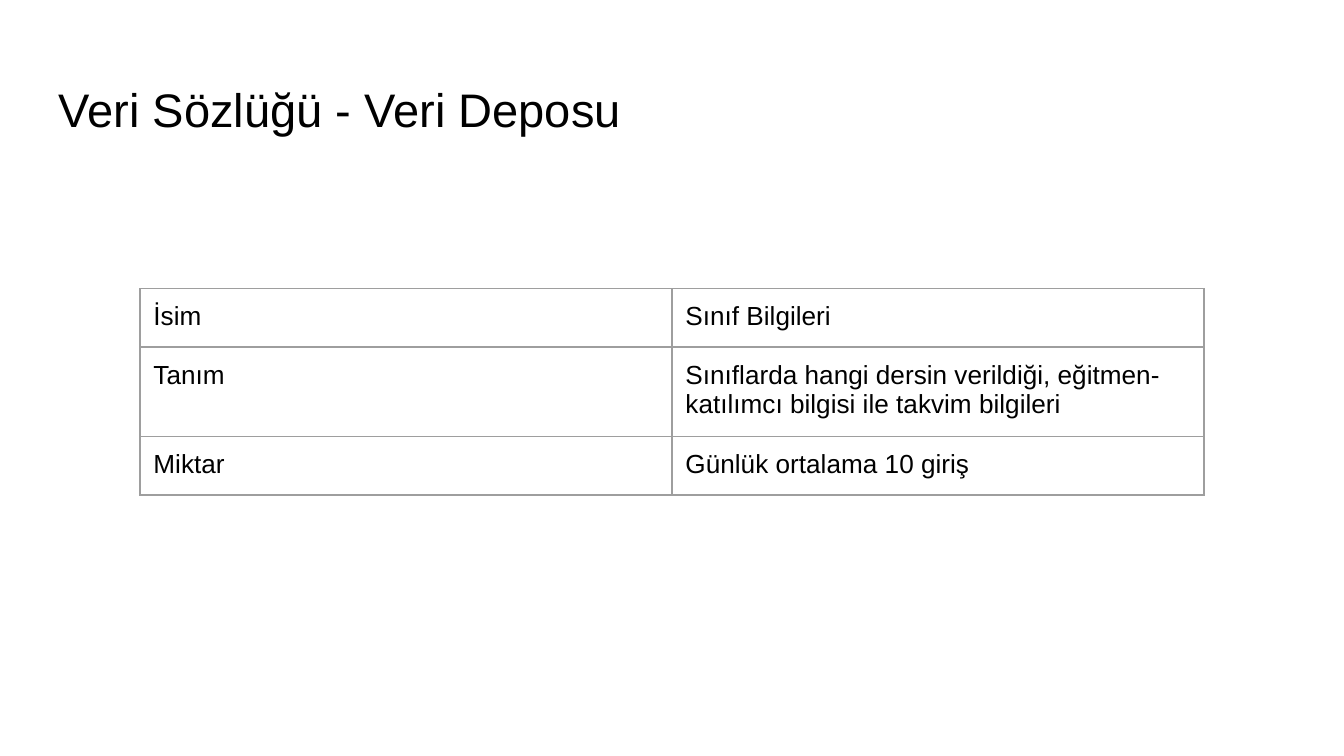
from dataclasses import dataclass

from lxml.etree import SubElement
from pptx import Presentation
from pptx.dml.color import RGBColor as RGB
from pptx.enum.text import MSO_ANCHOR as Anchor
from pptx.oxml.ns import qn
from pptx.util import Pt

COLORS = {"text": "000000", "border": "9E9E9E"}
FONT = "Arial"
INSET = 7.2
COL_W = 285
BORDER_W = 0.75


@dataclass
class Entry:
    label: str
    value: str
    height: float = 30.24


ENTRIES = [
    Entry("İsim", "Sınıf Bilgileri"),
    Entry("Tanım", "Sınıflarda hangi dersin verildiği, eğitmen-katılımcı bilgisi "
                   "ile takvim bilgileri"),
    Entry("Miktar", "Günlük ortalama 10 giriş"),
]


def add_run(tf, text: str, size: float) -> None:
    r = tf.paragraphs[0].add_run()
    r.text = text
    r.font.name = FONT
    r.font.size = Pt(size)
    r.font.color.rgb = RGB.from_string(COLORS["text"])


def set_insets(box) -> None:
    """Give a text frame or a table cell equal margins."""
    box.margin_left = box.margin_right = Pt(INSET)
    box.margin_top = box.margin_bottom = Pt(INSET)


def add_borders(cell) -> None:
    tc_pr = cell._tc.get_or_add_tcPr()
    for side in ("lnL", "lnR", "lnT", "lnB"):
        ln = SubElement(tc_pr, qn(f"a:{side}"), w=str(Pt(BORDER_W)))
        fill = SubElement(ln, qn("a:solidFill"))
        SubElement(fill, qn("a:srgbClr"), val=COLORS["border"])


def fill_cell(cell, text: str) -> None:
    set_insets(cell)
    add_borders(cell)
    cell.fill.background()
    add_run(cell.text_frame, text, 14)


def add_title(s, text: str) -> None:
    sp = s.shapes.add_textbox(Pt(24.5), Pt(35.3), Pt(671), Pt(45.4))
    tf = sp.text_frame
    tf.word_wrap = True
    tf.vertical_anchor = Anchor.MIDDLE
    set_insets(tf)
    add_run(tf, text, 25.2)


def add_dictionary(s, entries: list[Entry]) -> None:
    height = sum(e.height for e in entries)
    frame = s.shapes.add_table(len(entries), 2, Pt(75), Pt(154.7),
                               Pt(2 * COL_W), Pt(height))
    table = frame.table
    table.first_row = table.horz_banding = False
    for col in table.columns:
        col.width = Pt(COL_W)
    for row, entry in zip(table.rows, entries):
        row.height = Pt(entry.height)
        for cell, text in zip(row.cells, (entry.label, entry.value)):
            fill_cell(cell, text)


def main() -> None:
    prs = Presentation()
    prs.slide_width, prs.slide_height = Pt(720), Pt(405)
    s = prs.slides.add_slide(prs.slide_layouts[6])

    # Heading
    add_title(s, "Veri Sözlüğü - Veri Deposu")

    # Data store definition
    add_dictionary(s, ENTRIES)

    prs.save("out.pptx")


if __name__ == "__main__":
    main()
